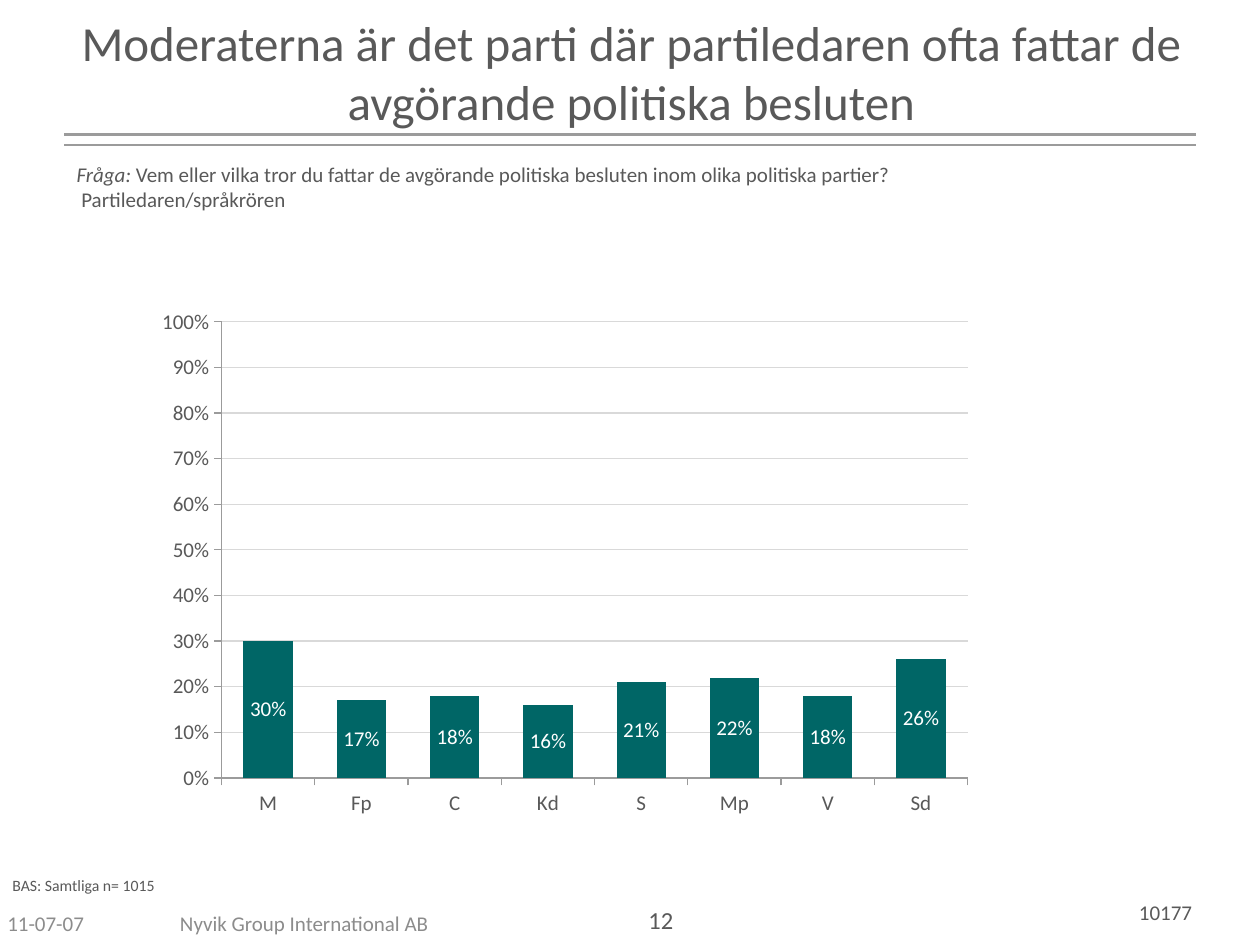
from lxml import etree
from pptx import Presentation
from pptx.chart.data import CategoryChartData
from pptx.dml.color import RGBColor
from pptx.enum.chart import XL_CHART_TYPE, XL_LABEL_POSITION, XL_TICK_MARK
from pptx.enum.shapes import MSO_CONNECTOR
from pptx.enum.text import MSO_ANCHOR, PP_ALIGN
from pptx.oxml import parse_xml
from pptx.oxml.ns import nsdecls, qn
from pptx.util import Inches, Pt

TEXT, MUTED, RULE, GRID, BAR = "595959", "8C8C8C", "9B9B9B", "D9D9D9", "006666"
MARGIN = 0.51


def set_font(font, size, color=TEXT):
    font.name = "Calibri"
    font.size = Pt(size)
    font.color.rgb = RGBColor.from_string(color)


def fill_text(shape, box, text, size, color=TEXT, align=PP_ALIGN.LEFT, anchor=MSO_ANCHOR.TOP):
    shape.left, shape.top, shape.width, shape.height = map(Inches, box)
    frame = shape.text_frame
    frame.word_wrap = True
    frame.vertical_anchor = anchor
    frame.text = text
    for paragraph in frame.paragraphs:
        paragraph.alignment = align
        for run in paragraph.runs:
            set_font(run.font, size, color)


presentation = Presentation()
presentation.slide_width, presentation.slide_height = Inches(10), Inches(7.5)
slide = presentation.slides.add_slide(presentation.slide_layouts[5])
shapes = slide.shapes

# Title with a double rule below
fill_text(shapes.title, (MARGIN, 0.05, 9, 1.25),
          "Moderaterna är det parti där partiledaren ofta fattar de avgörande politiska besluten",
          28, align=PP_ALIGN.CENTER)
for y in (1.07, 1.15):
    rule = shapes.add_connector(MSO_CONNECTOR.STRAIGHT, Inches(MARGIN), Inches(y),
                                Inches(10 - MARGIN), Inches(y))
    rule.line.color.rgb = RGBColor.from_string(RULE)
    rule.line.width = Pt(1.5)
    etree.SubElement(rule.element.spPr, qn("a:effectLst"))

# Stacked columns: share per party
chart_data = CategoryChartData(number_format="0%")
chart_data.categories = ["M", "Fp", "C", "Kd", "S", "Mp", "V", "Sd"]
chart_data.add_series("Series 1", (0.30, 0.17, 0.18, 0.16, 0.21, 0.22, 0.18, 0.26))
chart = shapes.add_chart(XL_CHART_TYPE.COLUMN_STACKED, Inches(1.22), Inches(1.86),
                         Inches(7.69), Inches(4.96), chart_data).chart
chart.has_legend = False
chart.has_title = False
set_font(chart.font, 18)

for axis in (chart.category_axis, chart.value_axis):
    axis.major_tick_mark = XL_TICK_MARK.OUTSIDE
    axis.minor_tick_mark = XL_TICK_MARK.NONE
    axis.format.line.color.rgb = RGBColor.from_string(RULE)
    set_font(axis.tick_labels.font, 12)
value_axis = chart.value_axis
value_axis.minimum_scale, value_axis.maximum_scale, value_axis.major_unit = 0, 1, 0.1
value_axis.tick_labels.number_format = "0%"
value_axis.tick_labels.number_format_is_linked = False
value_axis.major_gridlines.format.line.color.rgb = RGBColor.from_string(GRID)
value_axis.major_gridlines.format.line.width = Pt(0.75)

plot = chart.plots[0]
plot.gap_width, plot.overlap = 89, 100
plot.vary_by_categories = False
series = plot.series[0]
series.format.fill.solid()
series.format.fill.fore_color.rgb = RGBColor.from_string(BAR)
labels = series.data_labels
labels.show_value = True
labels.position = XL_LABEL_POSITION.CENTER
labels.number_format = "0%"
labels.number_format_is_linked = False
set_font(labels.font, 12, "FFFFFF")

# Fixed inner plot area, as shares of the chart
plot_area = chart.element.find(".//" + qn("c:plotArea"))
for old_layout in plot_area.findall(qn("c:layout")):
    plot_area.remove(old_layout)
settings = {"layoutTarget": "inner", "xMode": "edge", "yMode": "edge",
            "x": 0.07, "y": 0.14, "w": 0.77, "h": 0.73}
plot_area.insert(0, parse_xml(
    f"<c:layout {nsdecls('c')}><c:manualLayout>"
    + "".join(f'<c:{name} val="{value}"/>' for name, value in settings.items())
    + "</c:manualLayout></c:layout>"))

# Question, with its lead word in italics
question = shapes.add_textbox(0, 0, 0, 0)
fill_text(question, (MARGIN, 1.23, 8.98, 0.71), "Fråga: \n Partiledaren/språkrören", 12)
lead = question.text_frame.paragraphs[0]
lead.runs[0].font.italic = True
wording = lead.add_run()
wording.text = "Vem eller vilka tror du fattar de avgörande politiska besluten inom olika politiska partier?"
set_font(wording.font, 12)

# Base and footer
for box, text, size, color, align, anchor in (
    ((0, 6.9, 3.39, 0.25), "BAS: Samtliga n= 1015", 9, TEXT, PP_ALIGN.LEFT, MSO_ANCHOR.TOP),
    ((-0.04, 7.13, 2.33, 0.4), "11-07-07", 12, MUTED, PP_ALIGN.LEFT, MSO_ANCHOR.MIDDLE),
    ((0.83, 7.13, 3.17, 0.4), "Nyvik Group International AB", 12, MUTED, PP_ALIGN.CENTER, MSO_ANCHOR.MIDDLE),
    ((4.08, 7.13, 2.33, 0.4), "12", 14, TEXT, PP_ALIGN.CENTER, MSO_ANCHOR.TOP),
    ((6.96, 7.09, 2.6, 0.3), "10177", 12, TEXT, PP_ALIGN.RIGHT, MSO_ANCHOR.TOP),
):
    fill_text(shapes.add_textbox(0, 0, 0, 0), box, text, size, color, align, anchor)

presentation.save("out.pptx")
